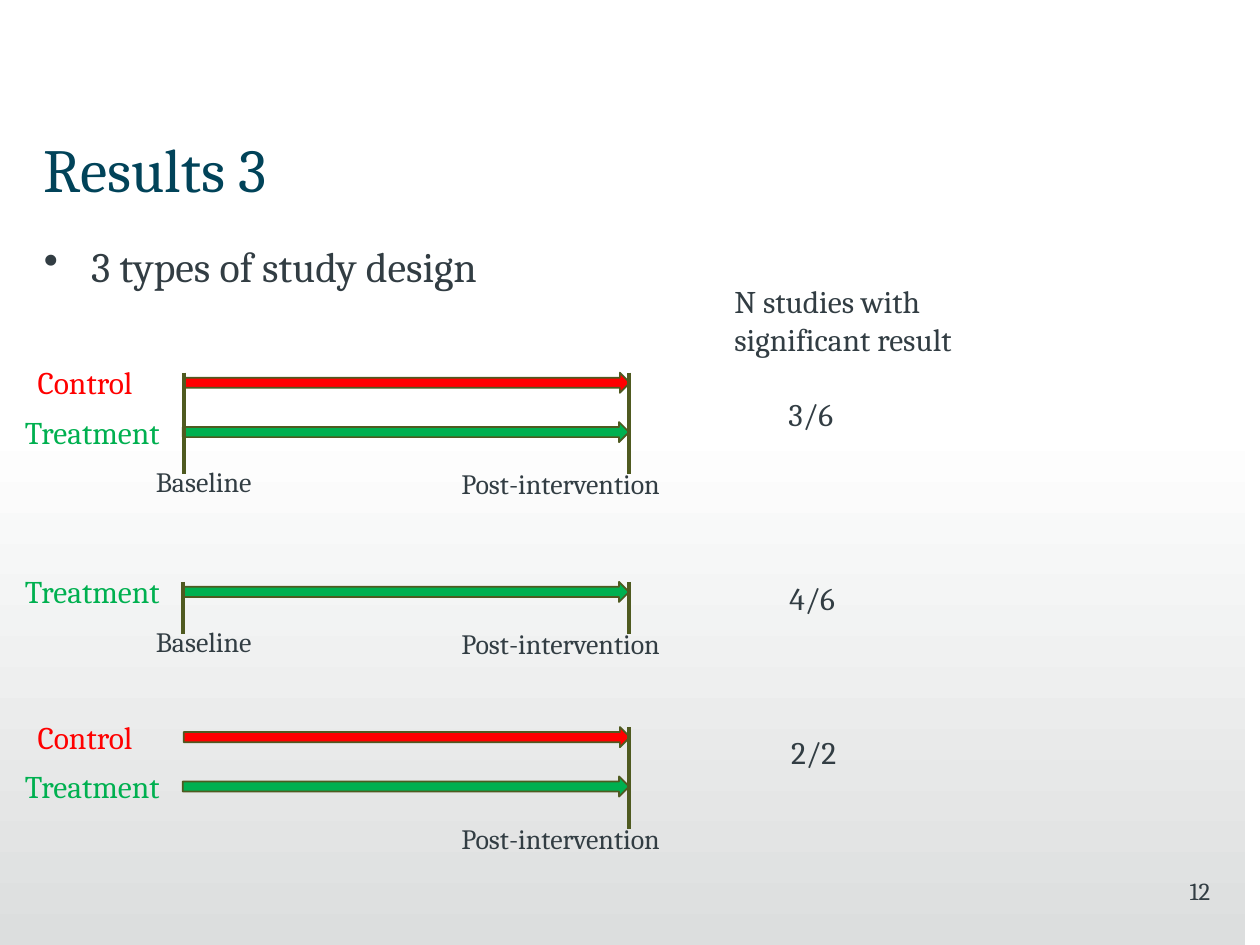
import pptx
import pptx.util
import pptx.dml.color
import pptx.enum.shapes
import pptx.enum.text
import pptx.oxml.ns
import lxml.etree

Pt = pptx.util.Pt
Shapes = pptx.enum.shapes.MSO_SHAPE
Align = pptx.enum.text.PP_ALIGN
qn = pptx.oxml.ns.qn


def color(value):
    return pptx.dml.color.RGBColor.from_string(value)


class SlideBuilder:
    font = "Cambria"
    ink = "323D43"
    title_ink = "014359"
    outline = "4F5A20"
    red = "FF0000"
    green = "00B050"

    def __init__(self, slide):
        self.slide = slide

    def background(self, left, top, width, height, start, end):
        shape = self.slide.shapes.add_shape(
            Shapes.RECTANGLE, Pt(left), Pt(top), Pt(width), Pt(height))
        shape.shadow.inherit = False
        shape.line.fill.background()
        shape.fill.gradient()
        shape.fill.gradient_angle = 270
        for stop, value, position in zip(shape.fill.gradient_stops, (start, end), (0, 1)):
            stop.color.rgb = color(value)
            stop.position = position

    def text(self, words, left, top, width, height, size=18, ink=None,
             align=Align.LEFT, inset_left=7.2, inset_right=7.2, bullet=False):
        shape = self.slide.shapes.add_textbox(Pt(left), Pt(top), Pt(width), Pt(height))
        frame = shape.text_frame
        frame.word_wrap = True
        frame.margin_left, frame.margin_right = Pt(inset_left), Pt(inset_right)
        paragraph = frame.paragraphs[0]
        paragraph.alignment = align
        if bullet:
            properties = paragraph._p.get_or_add_pPr()
            properties.set("marL", str(Pt(27)))
            properties.set("indent", str(-Pt(27)))
            mark = lxml.etree.SubElement(properties, qn("a:buChar"))
            mark.set("char", "•")
        run = paragraph.add_run()
        run.text = words
        run.font.name = self.font
        run.font.size = Pt(size)
        run.font.color.rgb = color(ink or self.ink)

    def arrow(self, left, top, fill):
        shape = self.slide.shapes.add_shape(
            Shapes.RIGHT_ARROW, Pt(left), Pt(top), Pt(255), Pt(11.5))
        shape.shadow.inherit = False
        shape.fill.solid()
        shape.fill.fore_color.rgb = color(fill)
        shape.line.color.rgb = color(self.outline)
        shape.line.width = Pt(1)

    def time_mark(self, x, top, length):
        connector = self.slide.shapes.add_connector(
            pptx.enum.shapes.MSO_CONNECTOR.STRAIGHT, Pt(x), Pt(top), Pt(x), Pt(top + length))
        connector.line.color.rgb = color(self.outline)
        connector.line.width = Pt(2)
        lxml.etree.SubElement(connector._element.spPr, qn("a:effectLst"))

    def control(self, top):
        self.arrow(105, top, self.red)
        self.text("Control", 14.4, top - 9, 113, 29, ink=self.red)

    def treatment(self, top):
        self.arrow(104.5, top, self.green)
        self.text("Treatment", 7.2, top - 9, 103, 29, ink=self.green)

    def baseline(self, x, top, length):
        self.time_mark(x, top, length)
        self.text("Baseline", 82, top + length - 9, 96.5, 26.6, size=16)

    def post_intervention(self, top, length, gap=-7.8):
        self.time_mark(359.5, top, length)
        self.text("Post-intervention", 256.5, top + length + gap, 187, 26.6, size=16)


def main():
    presentation = pptx.Presentation()
    presentation.slide_width, presentation.slide_height = Pt(720), Pt(540)
    builder = SlideBuilder(presentation.slides.add_slide(presentation.slide_layouts[6]))

    builder.background(0, 240, 711.5, 300, "FFFFFF", "DCDEDE")
    builder.text("Results 3", 25, 71.5, 669, 51, size=35,
                 ink=builder.title_ink, inset_left=0)
    builder.text("3 types of study design", 25, 134, 669, 324, size=24,
                 inset_left=0, bullet=True)
    builder.text("12", 541.5, 497, 150, 36, size=14, align=Align.RIGHT, inset_right=0)

    paired_top, single_top, post_only_top = 213, 332.5, 415.5
    row_gap = 28.2

    for top in (paired_top, post_only_top):
        builder.control(top)
        builder.treatment(top + row_gap)
    builder.treatment(single_top)

    builder.baseline(105, paired_top, 58)
    builder.baseline(104.5, single_top, 30)
    builder.post_intervention(paired_top, 58)
    builder.post_intervention(single_top, 30)
    builder.post_intervention(post_only_top, 58)

    builder.text("N studies with significant result", 412.5, 157.5, 156, 51)
    for result, left, top in (("3/6", 443.5, 222), ("4/6", 444, 327.5), ("2/2", 445, 415.5)):
        builder.text(result, left, top, 64, 29)

    presentation.save("out.pptx")


if __name__ == "__main__":
    main()
